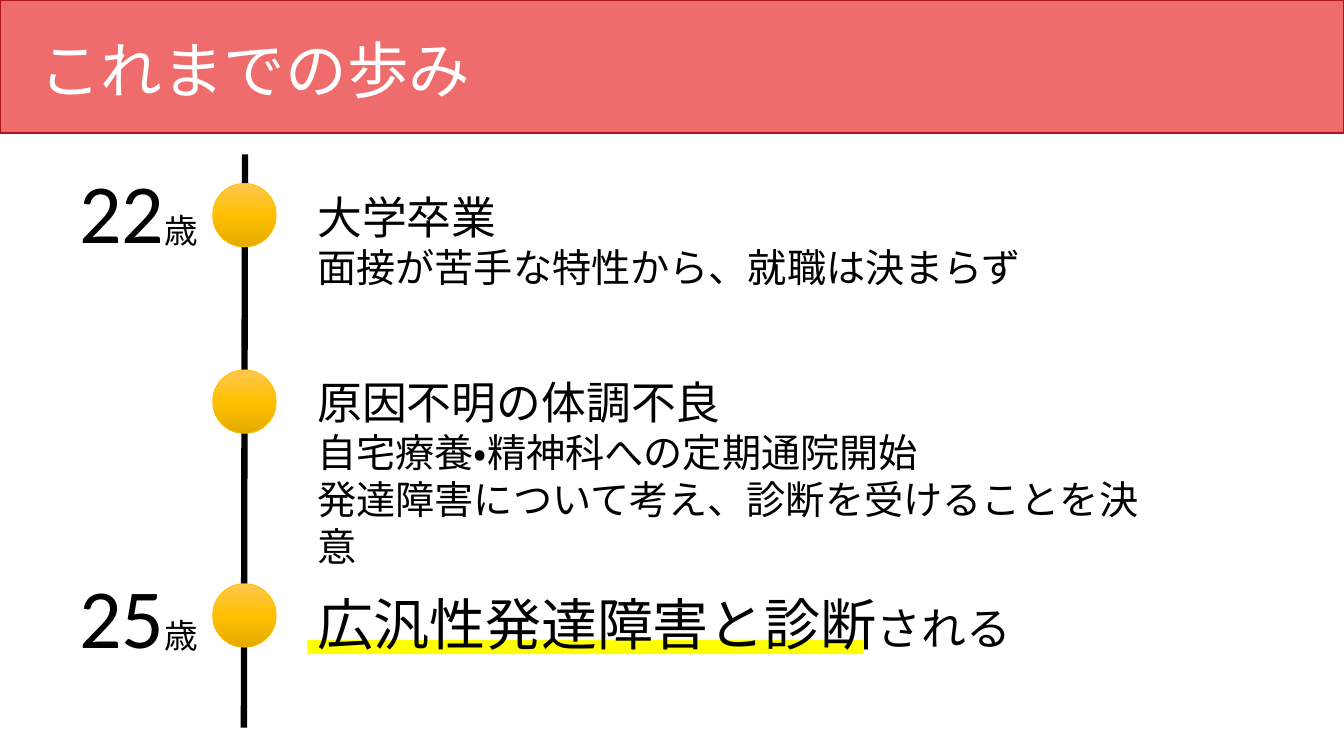
from copy import deepcopy
from lxml import etree
from pptx import Presentation
from pptx import util as u
from pptx.dml import color
from pptx.enum import lang, shapes, text
from pptx.oxml import ns

Pt = u.Pt
RGB = color.RGBColor
BLACK, WHITE = RGB(0, 0, 0), RGB(255, 255, 255)
CORAL, RED = RGB(0xEE, 0x6C, 0x6C), RGB(0xB0, 0x14, 0x14)
GOLD, YELLOW = RGB(0xFF, 0xC0, 0x00), RGB(0xFF, 0xFF, 0x00)
SHADES = [RGB(0xFF, 0xC7, 0x52), GOLD, RGB(0xE3, 0xAB, 0x00)]
FONT = {"name": "Calibri", "language_id": lang.MSO_LANGUAGE_ID.JAPANESE}
FRAME = {"word_wrap": True, "auto_size": text.MSO_AUTO_SIZE.NONE}

deck = Presentation()
deck.slide_width, deck.slide_height = Pt(960), Pt(540)
slide = deck.slides.add_slide(deck.slide_layouts[6])
parts = slide.shapes


def shape(kind, *box):
    item = parts.add_shape(kind, *map(Pt, box))
    item.shadow.inherit = False
    return item


def write(box, lines, ink=BLACK):
    """Add a text box; each line is a list of (words, size) runs."""
    frame = parts.add_textbox(*map(Pt, box)).text_frame
    for key, val in FRAME.items():
        setattr(frame, key, val)
    for i, line in enumerate(lines):
        para = frame.paragraphs[0] if i == 0 else frame.add_paragraph()
        for words, size in line:
            run = para.add_run()
            run.text = words
            for key, val in {**FONT, "size": Pt(size)}.items():
                setattr(run.font, key, val)
            run.font.color.rgb = ink
    return frame


# Title band
band = shape(shapes.MSO_SHAPE.RECTANGLE, 0, 0, 960, 95)
band.fill.solid()
band.fill.fore_color.rgb = CORAL
band.line.color.rgb = RED
band.line.width = Pt(1)
title = write((20.9, 0, 828, 104.4), [[("これまでの歩み", 44)]], WHITE)
title.vertical_anchor = text.MSO_ANCHOR.MIDDLE
title.paragraphs[0].line_spacing = 0.9

# Time line
axis = parts.add_connector(shapes.MSO_CONNECTOR.STRAIGHT,
                           Pt(175), Pt(110.2), Pt(174.2), Pt(519.8))
axis.line.color.rgb = BLACK
axis.line.width = Pt(4.5)
etree.SubElement(axis._element.spPr, ns.qn("a:effectLst"))

# Milestone dots
for top in (131, 264.2, 416.9):
    dot = shape(shapes.MSO_SHAPE.OVAL, 151.9, top, 45.4, 45.4)
    dot.fill.gradient()
    dot.fill.gradient_angle = 270
    stops = dot._element.spPr.find(".//" + ns.qn("a:gsLst"))
    stops.insert(1, deepcopy(stops[0]))
    for stop, place, shade in zip(dot.fill.gradient_stops, (0, 0.5, 1), SHADES):
        stop.position = place
        stop.color.rgb = shade
    dot.line.color.rgb = GOLD
    dot.line.width = Pt(0.5)

# Ages
for age, top in (("22", 110.2), ("25", 399.6)):
    write((49.7, top, 100, 80), [[(age, 60), ("歳", 24)]])

# Marker stroke under the diagnosis
mark = shape(shapes.MSO_SHAPE.RECTANGLE, 219.6, 457.2, 397.4, 10.1)
mark.fill.solid()
mark.fill.fore_color.rgb = YELLOW
mark.line.fill.background()

# Events
events = [
    (131.8, 624.2, 80, [[("大学卒業", 32)],
                        [("面接が苦手な特性から、就職は決まらず", 28)]]),
    (264.2, 614.9, 113.8, [[("原因不明の体調不良", 32)],
                           [("自宅療養・精神科への定期通院開始", 28)],
                           [("発達障害について考え、診断を受けることを決意", 28)]]),
    (417.6, 614.9, 55.4, [[("広汎性発達障害と診断", 40), ("される", 32)]]),
]
for top, wide, high, lines in events:
    write((219.6, top, wide, high), lines)

deck.save("out.pptx")
